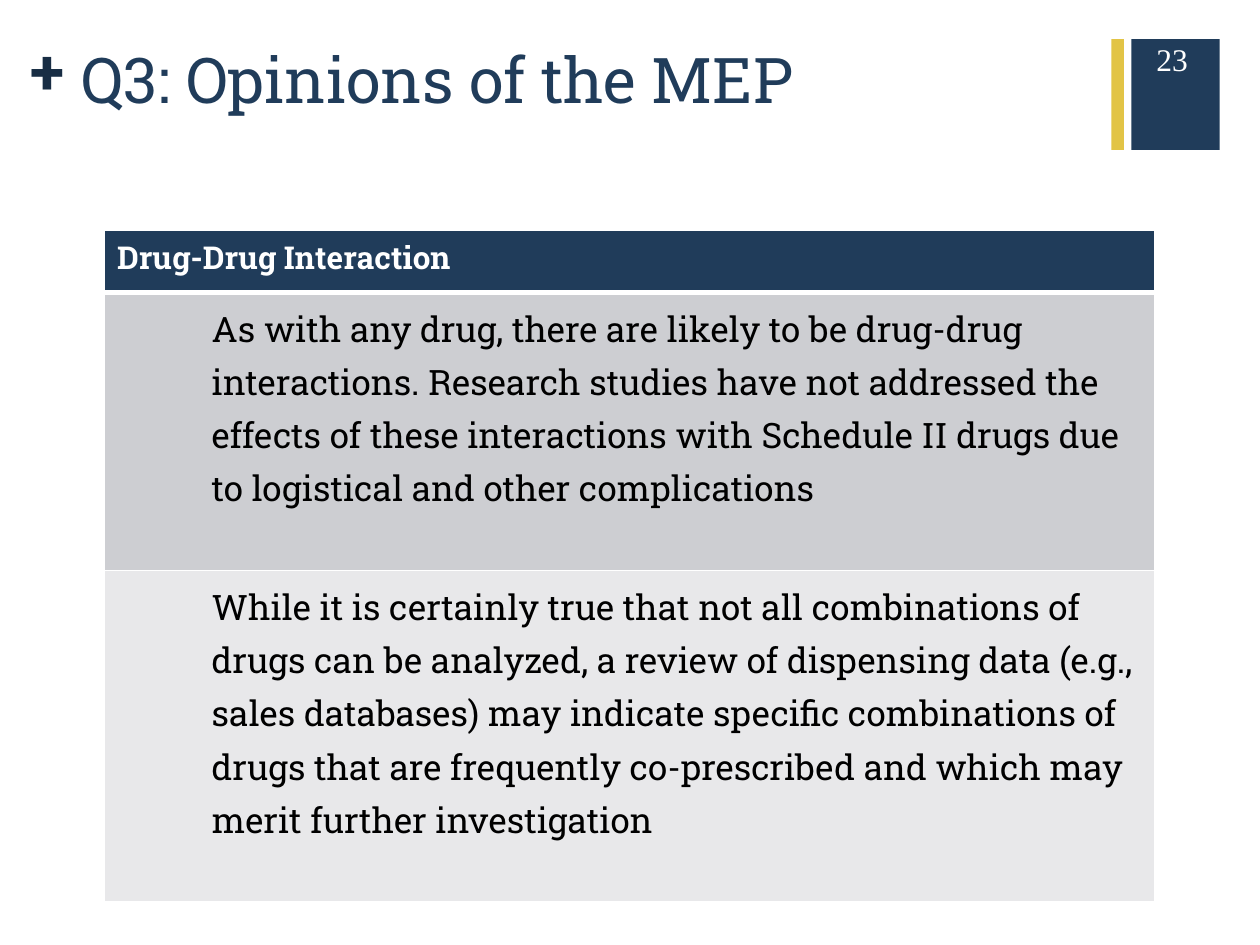
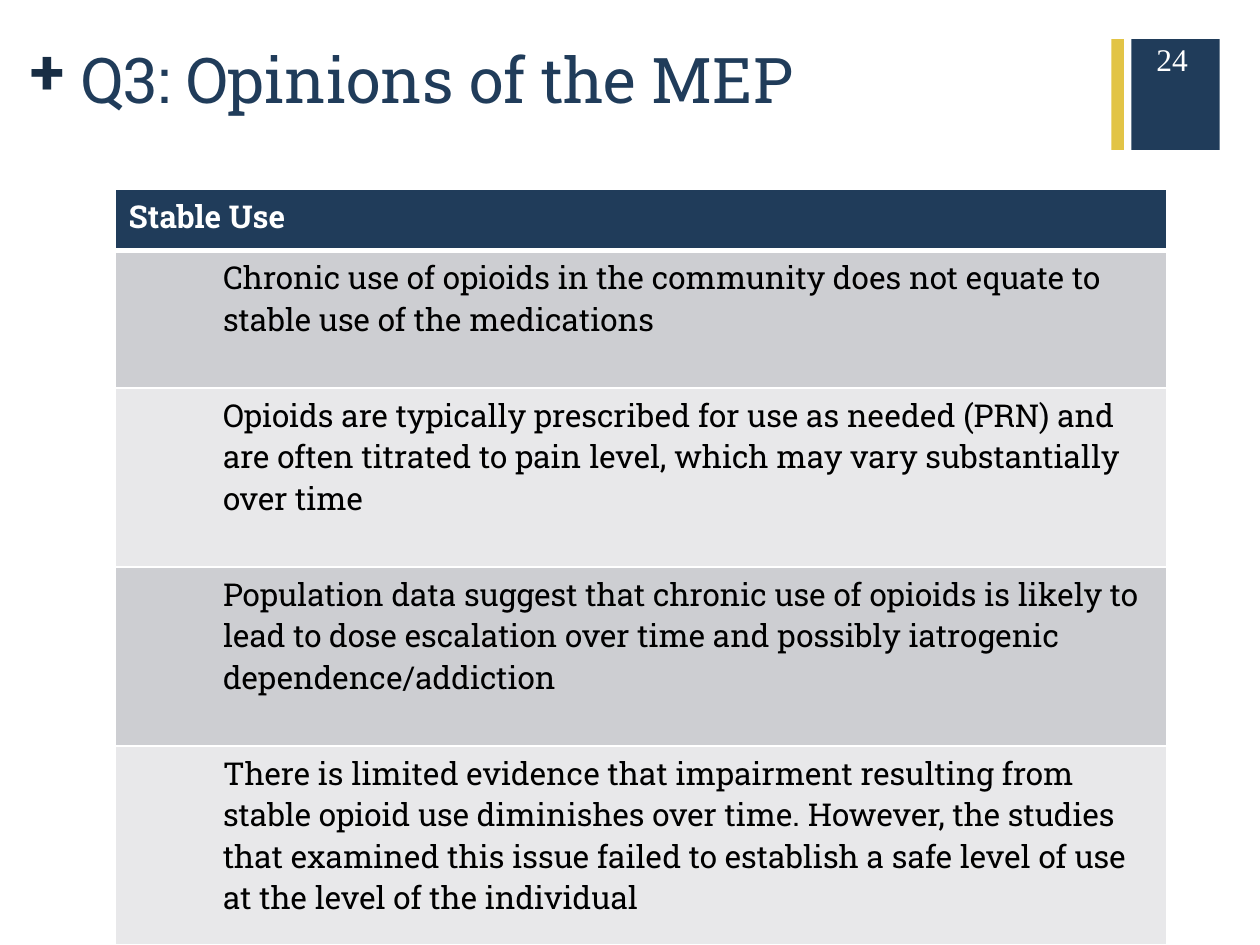
from lxml import etree
from pptx import Presentation
from pptx.dml.color import RGBColor
from pptx.enum.shapes import MSO_SHAPE as Shape
from pptx.enum.text import MSO_ANCHOR as Anchor
from pptx.oxml.ns import qn
from pptx.util import Inches, Pt

COLORS = {
    "navy": "203C5A",
    "plus": "182D44",
    "gold": "E2C446",
    "band_dark": "CDCED2",
    "band_light": "E8E8EA",
    "white": "FFFFFF",
    "black": "000000",
}
SLAB = "Roboto Slab"
SERIF = "Times New Roman"
COLUMN_WIDTHS = (0.75, 7.58)
HEADER_HEIGHT = 0.49


def rgb(name):
    return RGBColor.from_string(COLORS[name])


def write(frame, text, size=18, font=SLAB, color="black", bold=False, spacing=None):
    frame.word_wrap = True
    paragraph = frame.paragraphs[0]
    if spacing:
        paragraph.line_spacing = spacing
    run = paragraph.add_run()
    run.text = text
    run.font.size = Pt(size)
    run.font.name = font
    run.font.bold = bold
    run.font.color.rgb = rgb(color)


def paint_cell(cell, color, bottom=1):
    """Fill a cell and rule it in white above and below, with open sides."""
    cell.fill.solid()
    cell.fill.fore_color.rgb = rgb(color)
    properties = cell._tc.get_or_add_tcPr()
    widths = {"a:lnL": 0, "a:lnR": 0, "a:lnT": 1, "a:lnB": bottom}
    for position, (side, width) in enumerate(widths.items()):
        line = etree.Element(qn(side), w=str(Pt(width)))
        if width:
            fill = etree.SubElement(line, qn("a:solidFill"))
            etree.SubElement(fill, qn("a:srgbClr"), val=COLORS["white"])
        else:
            etree.SubElement(line, qn("a:noFill"))
        properties.insert(position, line)


class Deck:
    def __init__(self):
        self.presentation = Presentation()
        self.presentation.slide_width = Inches(10)
        self.presentation.slide_height = Inches(7.5)
        self.slide = None

    def block(self, left, top, width, height, color):
        shape = self.slide.shapes.add_shape(
            Shape.RECTANGLE, *map(Inches, (left, top, width, height)))
        shape.shadow.inherit = False
        shape.fill.solid()
        shape.fill.fore_color.rgb = rgb(color)
        shape.line.fill.background()

    def text(self, left, top, width, height, text, inset=True, **style):
        frame = self.slide.shapes.add_textbox(
            *map(Inches, (left, top, width, height))).text_frame
        frame.vertical_anchor = Anchor.TOP
        if not inset:
            frame.margin_left = frame.margin_right = 0
            frame.margin_top = frame.margin_bottom = 0
        write(frame, text, **style)

    def start_slide(self, title, number):
        """Add a slide with the corner blocks, plus sign, title and number."""
        self.slide = self.presentation.slides.add_slide(
            self.presentation.slide_layouts[6])
        self.block(8.98, 0.31, 0.7, 0.88, "navy")
        self.text(0.24, 0.25, 0.28, 0.61, "+", inset=False,
                  size=36, color="plus", bold=True)
        self.block(8.82, 0.31, 0.1, 0.88, "gold")
        self.text(0.55, 0.27, 8.26, 0.65, title, size=36, color="navy")
        self.text(9.08, 0.27, 0.61, 0.4, str(number), font=SERIF, color="white")

    def opinion_table(self, left, top, topic, opinions, **style):
        """Draw a topic header over banded rows of (height, opinion)."""
        heights = [HEADER_HEIGHT] + [height for height, _ in opinions]
        table = self.slide.shapes.add_table(
            len(heights), len(COLUMN_WIDTHS), Inches(left), Inches(top),
            Inches(sum(COLUMN_WIDTHS)), Inches(sum(heights))).table
        for column, width in zip(table.columns, COLUMN_WIDTHS):
            column.width = Inches(width)
        for row, height in zip(table.rows, heights):
            row.height = Inches(height)

        header = table.cell(0, 0)
        header.merge(table.cell(0, 1))
        for cell in table.rows[0].cells:
            paint_cell(cell, "navy", bottom=3)
        write(header.text_frame, topic, color="white", bold=True)

        for index, (_, opinion) in enumerate(opinions, start=1):
            for cell in table.rows[index].cells:
                paint_cell(cell, "band_dark" if index % 2 else "band_light")
            write(table.cell(index, 1).text_frame, opinion, **style)


def main():
    deck = Deck()
    title = "Q3: Opinions of the MEP"

    deck.start_slide(title, 23)
    deck.opinion_table(0.83, 1.83, "Drug-Drug Interaction", [
        (2.21, "As with any drug, there are likely to be drug-drug interactions. "
               "Research studies have not addressed the effects of these "
               "interactions with Schedule II drugs due to logistical and other "
               "complications"),
        (2.63, "While it is certainly true that not all combinations of drugs can "
               "be analyzed, a review of dispensing data (e.g., sales databases) "
               "may indicate specific combinations of drugs that are frequently "
               "co-prescribed and which may merit further investigation"),
    ], size=20, spacing=1.15)

    deck.start_slide(title, 24)
    deck.opinion_table(0.92, 1.5, "Stable Use", [
        (1.09, "Chronic use of opioids in the community does not equate to stable "
               "use of the medications"),
        (1.42, "Opioids are typically prescribed for use as needed (PRN) and are "
               "often titrated to pain level, which may vary substantially over "
               "time"),
        (1.42, "Population data suggest that chronic use of opioids is likely to "
               "lead to dose escalation over time and possibly iatrogenic "
               "dependence/addiction"),
        (1.58, "There is limited evidence that impairment resulting from stable "
               "opioid use diminishes over time. However, the studies that "
               "examined this issue failed to establish a safe level of use at "
               "the level of the individual"),
    ])

    deck.presentation.save("out.pptx")


if __name__ == "__main__":
    main()
